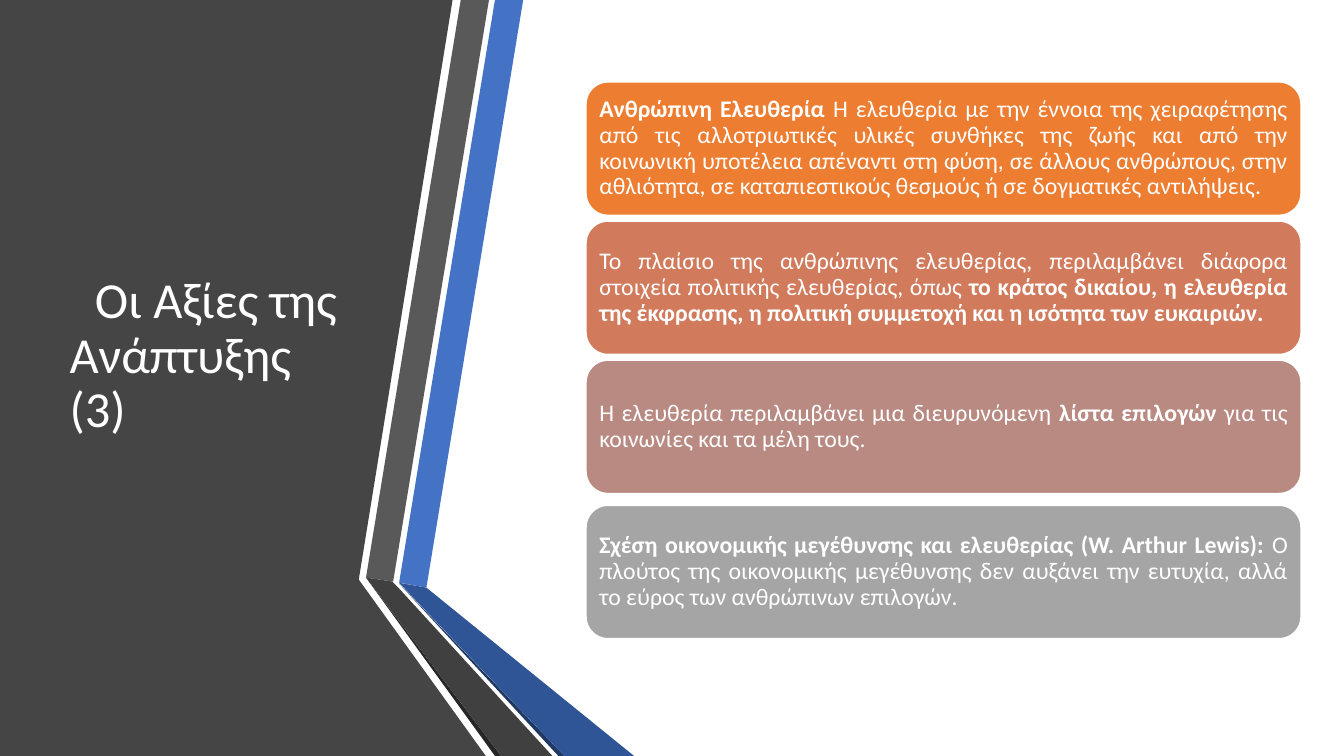
from dataclasses import dataclass

from pptx import Presentation
from pptx.dml.color import RGBColor
from pptx.enum.shapes import MSO_SHAPE
from pptx.enum.text import MSO_ANCHOR, MSO_AUTO_SIZE, PP_ALIGN
from pptx.util import Inches, Pt

WIDTH, HEIGHT = Inches(13.333), Inches(7.5)
FONT = "Calibri"
WHITE = "FFFFFF"

# Card grid, in percent of the slide's width and height
CARD_LEFT, CARD_WIDTH = 43.58, 53.25
CARD_TOP, CARD_HEIGHT, CARD_PITCH = 10.8, 17.73, 18.4


@dataclass
class Band:
    color: str
    points: list[tuple[float, float]]


@dataclass
class Run:
    text: str
    bold: bool = False


@dataclass
class Card:
    color: str
    runs: list[Run]
    drop: float = 0  # extra distance below the regular row


# Corners in percent of the slide's width and height
BANDS = [
    Band("454545", [(0, 0), (33.68, 0), (26.7, 76.67), (36.15, 100), (0, 100)]),
    Band("4472C4", [(29.7, 77.07), (31.73, 77.73), (38.93, 0), (36.83, 0)]),
    Band("595959", [(36.38, 0), (34.28, 0), (27.23, 76.4), (29.25, 76.93)]),
    Band("262626", [(27.23, 76.4), (36.83, 100), (37.28, 100)]),
    Band("203864", [(29.7, 77.2), (41.55, 100), (42, 100)]),
    Band("2F5597", [(29.7, 77.1), (42, 100), (47.18, 100), (31.73, 77.73)]),
    Band("404040", [(41.1, 100), (29.63, 77.73), (29.18, 76.93),
                    (27.23, 76.4), (37.28, 100)]),
]

CARDS = [
    Card("ED7D31", [
        Run("Ανθρώπινη Ελευθερία ", True),
        Run("Η ελευθερία με την έννοια της χειραφέτησης από τις αλλοτριωτικές "
            "υλικές συνθήκες της ζωής και από την κοινωνική υποτέλεια απέναντι "
            "στη φύση, σε άλλους ανθρώπους, στην αθλιότητα, σε καταπιεστικούς "
            "θεσμούς ή σε δογματικές αντιλήψεις."),
    ]),
    Card("D17B5C", [
        Run("Το πλαίσιο της ανθρώπινης ελευθερίας, περιλαμβάνει διάφορα "
            "στοιχεία πολιτικής ελευθερίας, όπως "),
        Run("το κράτος δικαίου, η ελευθερία της έκφρασης, η πολιτική συμμετοχή "
            "και η ισότητα των ευκαιριών.", True),
    ]),
    Card("B98A82", [
        Run("Η ελευθερία περιλαμβάνει μια διευρυνόμενη "),
        Run("λίστα επιλογών ", True),
        Run("για τις κοινωνίες και τα μέλη τους."),
    ]),
    Card("A5A5A5", [
        Run("Σχέση οικονομικής μεγέθυνσης και ελευθερίας (W. Arthur Lewis): ", True),
        Run("Ο πλούτος της οικονομικής μεγέθυνσης δεν αυξάνει την ευτυχία, αλλά "
            "το εύρος των ανθρώπινων επιλογών."),
    ], drop=0.8),
]


def across(percent: float) -> int:
    return round(WIDTH * percent / 100)


def down(percent: float) -> int:
    return round(HEIGHT * percent / 100)


def rgb(color: str) -> RGBColor:
    return RGBColor.from_string(color)


def apply(target, values: dict) -> None:
    for name, value in values.items():
        setattr(target, name, value)


def fill_shape(shape, color: str) -> None:
    shape.shadow.inherit = False
    shape.fill.solid()
    shape.fill.fore_color.rgb = rgb(color)


def add_run(paragraph, run: Run, size: float) -> None:
    text_run = paragraph.add_run()
    text_run.text = run.text
    apply(text_run.font, {"name": FONT, "size": Pt(size), "bold": run.bold})
    text_run.font.color.rgb = rgb(WHITE)


def draw_band(slide, band: Band) -> None:
    corners = [(across(x), down(y)) for x, y in band.points]
    builder = slide.shapes.build_freeform(*corners[0])
    builder.add_line_segments(corners[1:], close=True)
    shape = builder.convert_to_shape()
    fill_shape(shape, band.color)
    shape.line.fill.background()


def draw_card(slide, card: Card, row: int) -> None:
    shape = slide.shapes.add_shape(
        MSO_SHAPE.ROUNDED_RECTANGLE, across(CARD_LEFT),
        down(CARD_TOP + row * CARD_PITCH + card.drop),
        across(CARD_WIDTH), down(CARD_HEIGHT))
    fill_shape(shape, card.color)
    shape.line.color.rgb = rgb(WHITE)
    shape.line.width = Pt(1.5)
    inset = Inches(0.07)
    apply(shape.text_frame, {
        "word_wrap": True, "vertical_anchor": MSO_ANCHOR.MIDDLE,
        "margin_left": inset, "margin_right": inset,
        "margin_top": inset, "margin_bottom": inset})
    paragraph = shape.text_frame.paragraphs[0]
    apply(paragraph, {"alignment": PP_ALIGN.JUSTIFY, "line_spacing": 0.9})
    for run in card.runs:
        add_run(paragraph, run, 17)


def draw_title(slide, text: str) -> None:
    title = slide.shapes.title
    apply(title, {"left": across(4.43), "top": down(10),
                  "width": across(22.5), "height": down(74.4)})
    apply(title.text_frame, {"word_wrap": True, "auto_size": MSO_AUTO_SIZE.NONE,
                             "vertical_anchor": MSO_ANCHOR.MIDDLE})
    paragraph = title.text_frame.paragraphs[0]
    apply(paragraph, {"alignment": PP_ALIGN.LEFT, "line_spacing": 0.9})
    add_run(paragraph, Run(text), 36)
    # First-line indent
    paragraph.runs[0].font  # run exists before the paragraph properties are set
    properties = paragraph.element.get_or_add_pPr() if hasattr(
        paragraph, "element") else paragraph._p.get_or_add_pPr()
    properties.set("marL", "0")
    properties.set("indent", str(Inches(0.25)))
    # Bring the title in front of the dark panel
    title.element.getparent().append(title.element)


def main() -> None:
    presentation = Presentation()
    apply(presentation, {"slide_width": WIDTH, "slide_height": HEIGHT})
    slide = presentation.slides.add_slide(presentation.slide_layouts[5])
    for band in BANDS:
        draw_band(slide, band)
    draw_title(slide, "Οι Αξίες της Ανάπτυξης (3)")
    for row, card in enumerate(CARDS):
        draw_card(slide, card, row)
    presentation.save("out.pptx")


if __name__ == "__main__":
    main()
